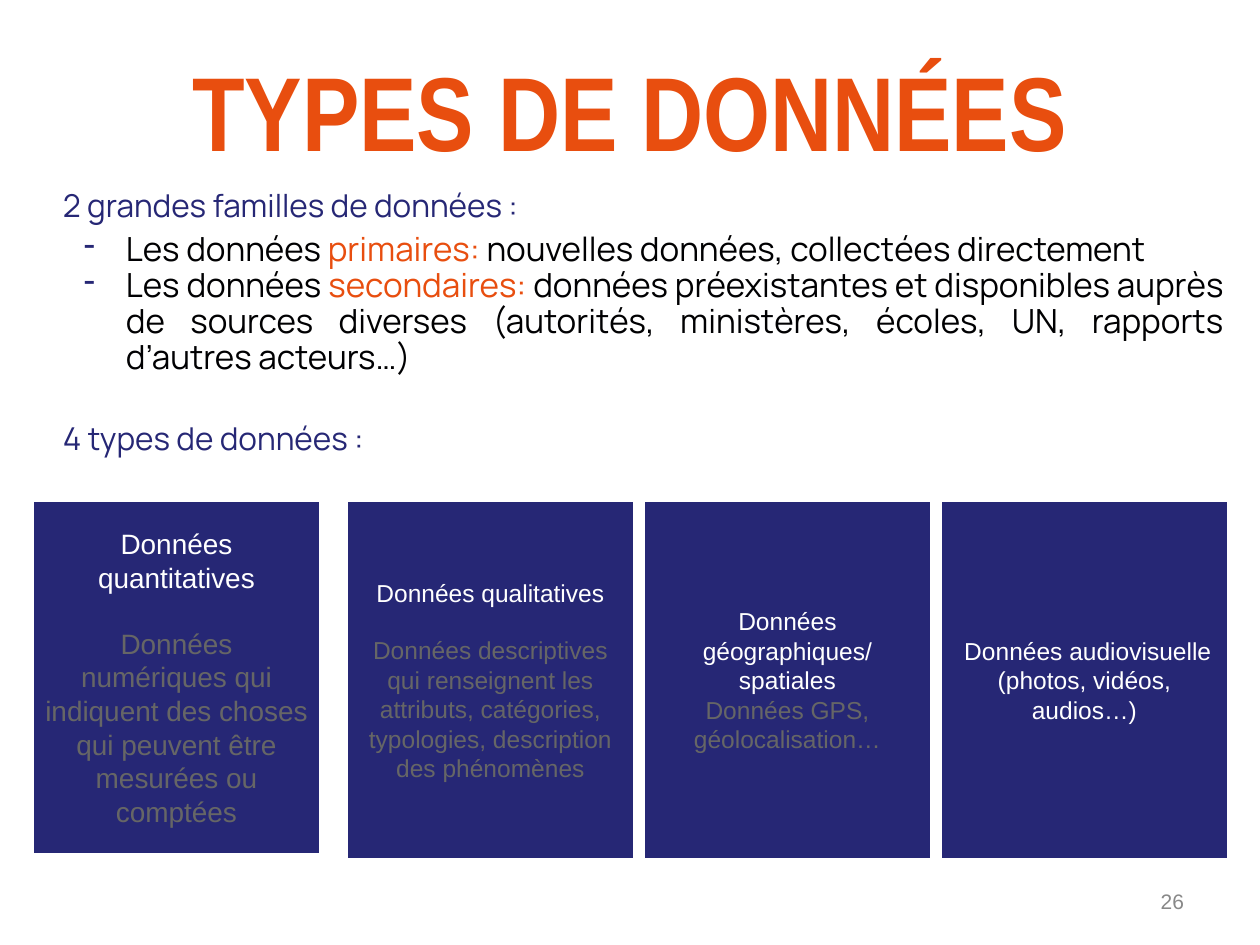
"""Build the slide on families and types of data."""
from dataclasses import dataclass

from lxml import etree
from pptx import Presentation
from pptx import util as u
from pptx.dml.color import RGBColor
from pptx.enum import shapes, text
from pptx.oxml import ns


@dataclass(frozen=True)
class Theme:
    orange: str = "E84E0F"
    navy: str = "262775"
    black: str = "000002"
    white: str = "FFFFFF"
    grey: str = "666666"
    pale: str = "888888"
    title_font: str = "Arial Narrow"
    body_font: str = "Manrope"
    card_font: str = "Arial"
    title_size: int = 60
    lead_size: int = 18
    bullet_size: int = 19
    number_size: int = 12


THEME = Theme()
ALIGN = text.PP_ALIGN
MIDDLE = text.MSO_ANCHOR.MIDDLE

TITLE = "TYPES DE DONNÉES"
FAMILIES = "2 grandes familles de données :"
BULLETS = [
    ("Les données ", "primaires: ", "nouvelles données, collectées directement"),
    ("Les données ", "secondaires:",
     " données préexistantes et disponibles auprès de sources diverses "
     "(autorités, ministères, écoles, UN, rapports d’autres acteurs…)"),
]
KINDS = "4 types de données :"
CARDS = [
    dict(head="Données quantitatives", size=16, gap=18.4,
         detail="Données numériques qui indiquent des choses qui peuvent être "
                "mesurées ou comptées"),
    dict(head="Données qualitatives", size=14, gap=16.1,
         detail="Données descriptives qui renseignent les attributs, catégories, "
                "typologies, description des phénomènes"),
    dict(head="Données géographiques/ spatiales", size=14, gap=0,
         detail="Données GPS, géolocalisation…"),
    dict(head=" Données audiovisuelle (photos, vidéos, audios…)", size=14),
]
PAGE_NUMBER = "26"

SLIDE_SIZE = (1260, 945)
TITLE_BOX = (0, 34, 1260, 152)
BODY_BOX = (50, 180, 1187, 344)
NUMBER_BOX = (903, 876, 294, 50)
CARD_TOP, CARD_WIDTH = 500, 289
FIRST_LEFT, FIRST_HEIGHT = 32, 355
NEXT_LEFT, NEXT_HEIGHT, CARD_STEP = 346, 360, 297


def px(value):
    return u.Emu(round(value * 914400 / 126))


def box(values):
    return [px(value) for value in values]


def set_frame(frame, anchor=text.MSO_ANCHOR.TOP, inset=6):
    frame.word_wrap = True
    frame.auto_size = text.MSO_AUTO_SIZE.NONE
    frame.vertical_anchor = anchor
    frame.margin_left = frame.margin_right = px(13)
    frame.margin_top = frame.margin_bottom = px(inset)
    return frame


def write(frame, content, colors, font, size, align=ALIGN.CENTER, bold=False,
          before=0, spacing=1.0):
    """Add a paragraph whose runs pair the pieces of content with colors."""
    paragraph = frame.paragraphs[0]
    if paragraph.runs:
        paragraph = frame.add_paragraph()
    paragraph.alignment = align
    paragraph.space_before = u.Pt(before)
    paragraph.line_spacing = spacing
    for piece, color in zip(content, colors):
        run = paragraph.add_run()
        run.text = piece
        run.font.name = font
        run.font.size = u.Pt(size)
        run.font.bold = bold
        run.font.color.rgb = RGBColor.from_string(color)
    return paragraph


def add_dash(paragraph, color):
    properties = paragraph._p.get_or_add_pPr()
    properties.set("marL", str(px(63)))
    properties.set("indent", str(-px(42)))
    bullet_color = etree.SubElement(properties, ns.qn("a:buClr"))
    etree.SubElement(bullet_color, ns.qn("a:srgbClr"), val=color)
    etree.SubElement(properties, ns.qn("a:buChar"), char="-")


def add_body(slide):
    frame = set_frame(slide.shapes.add_textbox(*box(BODY_BOX)).text_frame)
    lead = dict(colors=[THEME.navy], font=THEME.body_font,
                size=THEME.lead_size, align=ALIGN.JUSTIFY)
    write(frame, [FAMILIES], **lead)
    for index, pieces in enumerate(BULLETS):
        paragraph = write(frame, pieces, [THEME.black, THEME.orange, THEME.black],
                          THEME.body_font, THEME.bullet_size, ALIGN.JUSTIFY,
                          before=0 if index else 5, spacing=0.9)
        add_dash(paragraph, THEME.navy)
    write(frame, [KINDS], before=24.6, **lead)


def add_card(slide, index, card):
    left = NEXT_LEFT + (index - 1) * CARD_STEP if index else FIRST_LEFT
    height = NEXT_HEIGHT if index else FIRST_HEIGHT
    shape = slide.shapes.add_shape(shapes.MSO_SHAPE.RECTANGLE,
                                   *box((left, CARD_TOP, CARD_WIDTH, height)))
    shape.shadow.inherit = False
    shape.fill.solid()
    shape.fill.fore_color.rgb = RGBColor.from_string(THEME.navy)
    shape.line.color.rgb = RGBColor.from_string(THEME.white)
    shape.line.width = u.Pt(2)
    frame = set_frame(shape.text_frame, MIDDLE)
    write(frame, [card["head"]], [THEME.white], THEME.card_font, card["size"])
    if "detail" in card:
        write(frame, [card["detail"]], [THEME.grey], THEME.card_font,
              card["size"], before=card["gap"])


def main():
    presentation = Presentation()
    presentation.slide_width, presentation.slide_height = box(SLIDE_SIZE)
    slide = presentation.slides.add_slide(presentation.slide_layouts[5])
    title = slide.shapes.title
    title.left, title.top, title.width, title.height = box(TITLE_BOX)
    write(set_frame(title.text_frame, inset=13), [TITLE], [THEME.orange],
          THEME.title_font, THEME.title_size, bold=True)
    add_body(slide)
    for index, card in enumerate(CARDS):
        add_card(slide, index, card)
    number = slide.shapes.add_textbox(*box(NUMBER_BOX))
    write(set_frame(number.text_frame, MIDDLE), [PAGE_NUMBER], [THEME.pale],
          THEME.card_font, THEME.number_size, ALIGN.RIGHT)
    presentation.save("out.pptx")


if __name__ == "__main__":
    main()
